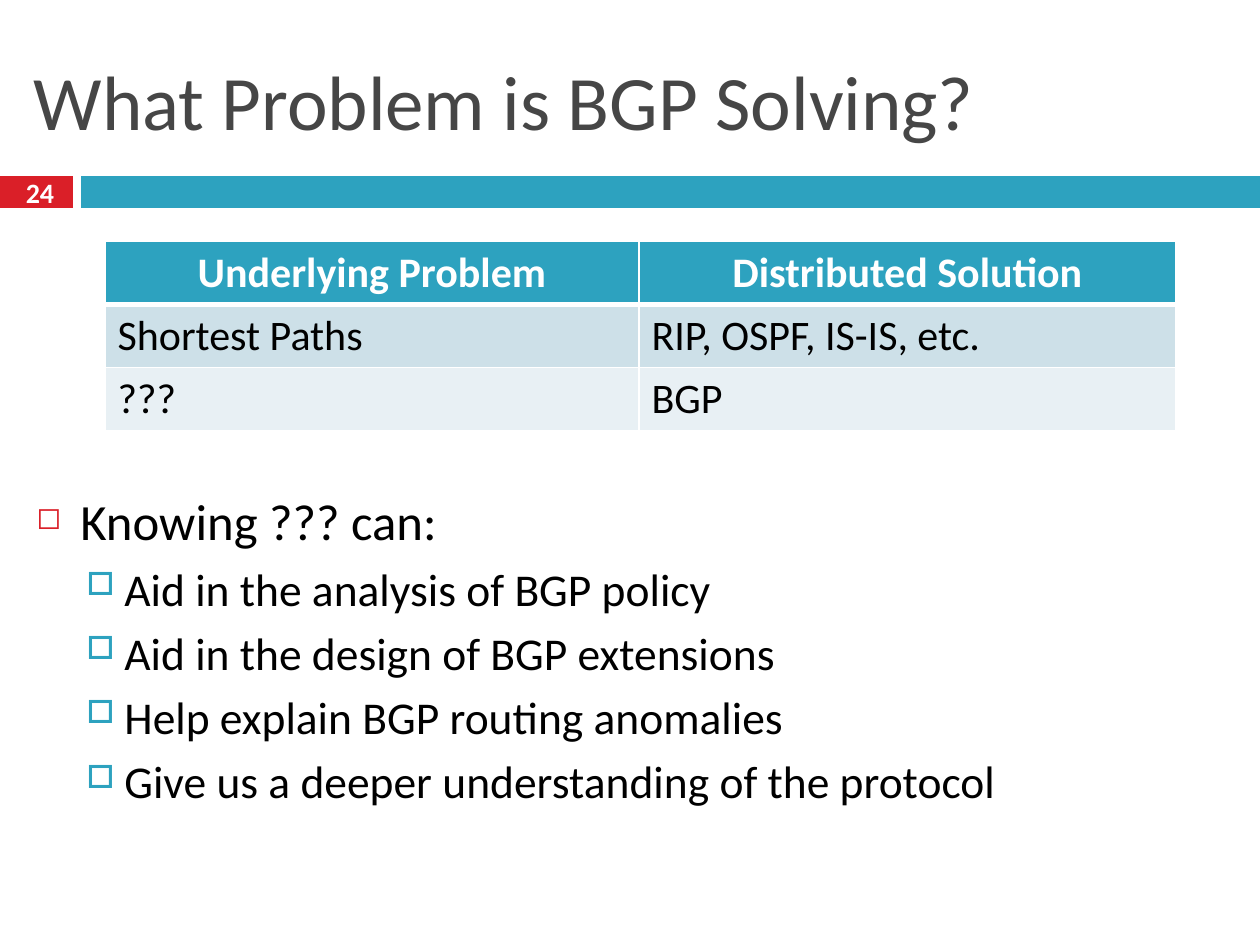
"""Build the slide on the problem that BGP solves."""
from lxml import etree
from pptx import Presentation
from pptx.dml.color import RGBColor
from pptx.enum.shapes import MSO_SHAPE
from pptx.enum.text import MSO_ANCHOR, PP_ALIGN
from pptx.oxml.ns import qn
from pptx.util import Pt

PX = 914400 / 126
RECTANGLE = MSO_SHAPE.RECTANGLE
MIDDLE = MSO_ANCHOR.MIDDLE
LEFT, CENTER = PP_ALIGN.LEFT, PP_ALIGN.CENTER
COLORS = {"title": "464646", "red": "DA1F28", "teal": "2DA2BF", "white": "FFFFFF",
          "black": "000000", "row_dark": "CDE0E8", "row_light": "E8F0F4"}


def box(*lengths):
    return [round(length * PX) for length in lengths]


def style(paragraph, size, color, bold=False, align=LEFT):
    paragraph.alignment = align
    paragraph.font.name = "Calibri"
    paragraph.font.size = Pt(size)
    paragraph.font.bold = bold
    paragraph.font.color.rgb = RGBColor.from_string(COLORS[color])


prs = Presentation()
prs.slide_width, prs.slide_height = box(1260, 945)
slide = prs.slides.add_slide(prs.slide_layouts[5])

for left, width, color in [(0, 73, "red"), (81, 1179, "teal")]:
    band = slide.shapes.add_shape(RECTANGLE, *box(left, 176, width, 32))
    band.shadow.inherit = False
    band.fill.solid()
    band.fill.fore_color.rgb = RGBColor.from_string(COLORS[color])
    band.line.fill.background()

title = slide.shapes.title
title.left, title.top, title.width, title.height = box(21, 32, 1218, 136)
title.text_frame.text = "What Problem is BGP Solving?"
title.text_frame.vertical_anchor = MIDDLE
style(title.text_frame.paragraphs[0], 44, "title")

page_number = slide.shapes.add_textbox(*box(-1, 174, 82, 36)).text_frame
page_number.word_wrap = True
page_number.vertical_anchor = MIDDLE
page_number.text = "24"
style(page_number.paragraphs[0], 16, "white", True, CENTER)

rows = [("Underlying Problem", "Distributed Solution"),
        ("Shortest Paths", "RIP, OSPF, IS-IS, etc."),
        ("???", "BGP")]
row_fills = ["teal", "row_dark", "row_light"]
solutions = slide.shapes.add_table(3, 2, *box(105, 241, 1071, 190)).table
for column, width in zip(solutions.columns, box(534, 537)):
    column.width = width
for r, (texts, fill) in enumerate(zip(rows, row_fills)):
    header = r == 0
    for c, text in enumerate(texts):
        cell = solutions.cell(r, c)
        cell.text = text
        style(cell.text_frame.paragraphs[0], 24, "white" if header else "black",
              header, CENTER if header else LEFT)
        properties = cell._tc.get_or_add_tcPr()
        for side in "LRTB":
            thick = (header and side == "B") or (r == 1 and side == "T")
            border = etree.SubElement(properties, qn(f"a:ln{side}"), w=str(Pt(3 if thick else 1)))
            border_fill = etree.SubElement(border, qn("a:solidFill"))
            etree.SubElement(border_fill, qn("a:srgbClr"), val=COLORS["white"])
        cell.fill.solid()
        cell.fill.fore_color.rgb = RGBColor.from_string(COLORS[fill])

main_point = (0, 44, 44, 29, 7, "◻", "red", 60)
sub_point = (1, 88, 38, 26, 5.5, "□", "teal", 70)
points = [("Knowing ??? can:", main_point),
          ("Aid in the analysis of BGP policy", sub_point),
          ("Aid in the design of BGP extensions", sub_point),
          ("Help explain BGP routing anomalies", sub_point),
          ("Give us a deeper understanding of the protocol", sub_point)]
benefits = slide.shapes.add_textbox(*box(24, 484, 1218, 399)).text_frame
benefits.word_wrap = True
for i, (text, point) in enumerate(points):
    level, margin, hanging, size, space, bullet, bullet_color, bullet_size = point
    paragraph = benefits.add_paragraph() if i else benefits.paragraphs[0]
    paragraph.text = text
    paragraph.level = level
    paragraph.space_before = Pt(space)
    properties = paragraph._p.get_or_add_pPr()
    properties.set("marL", str(round(margin * PX)))
    properties.set("indent", str(round(-hanging * PX)))
    color_choice = etree.SubElement(properties, qn("a:buClr"))
    etree.SubElement(color_choice, qn("a:srgbClr"), val=COLORS[bullet_color])
    etree.SubElement(properties, qn("a:buSzPct"), val=str(bullet_size * 1000))
    etree.SubElement(properties, qn("a:buChar"), char=bullet)
    style(paragraph, size, "black")

prs.save("out.pptx")
